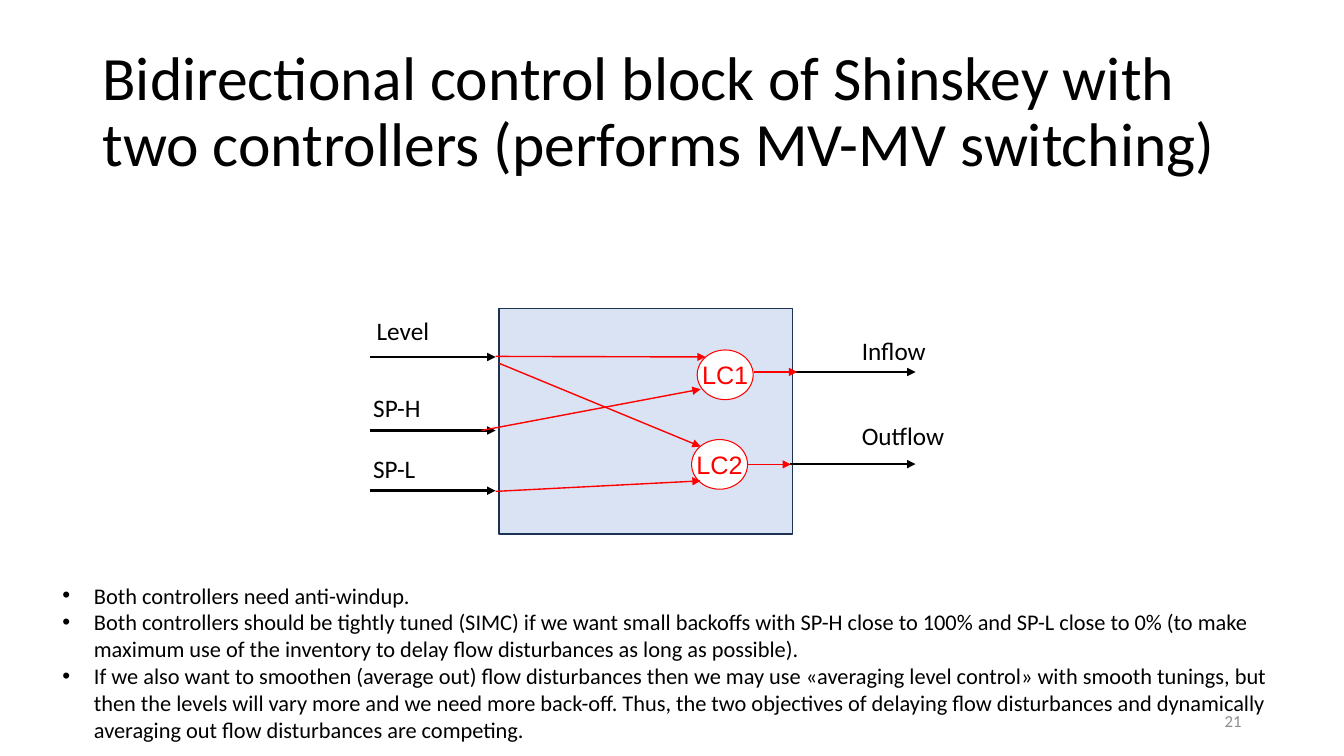
from lxml import etree
from pptx import Presentation
from pptx.dml.color import RGBColor
from pptx.enum.shapes import MSO_CONNECTOR, MSO_SHAPE
from pptx.enum.text import MSO_ANCHOR as Anchor, MSO_AUTO_SIZE as AutoSize, PP_ALIGN as Align
from pptx.oxml.ns import qn
from pptx.util import Pt

BLACK, RED, GREY = "000000", "FF0000", "8C8C8C"
TITLE = "Bidirectional control block of Shinskey with two controllers (performs MV-MV switching)"
NOTES = [
    "Both controllers need anti-windup.",
    "Both controllers should be tightly tuned (SIMC) if we want small backoffs with SP-H close to 100% "
    "and SP-L close to 0% (to make maximum use of the inventory to delay flow disturbances as long as possible).",
    "If we also want to smoothen (average out) flow disturbances then we may use «averaging level control» "
    "with smooth tunings, but then the levels will vary more and we need more back-off. Thus, the two "
    "objectives of delaying flow disturbances and dynamically averaging out flow disturbances are competing.",
]
SIGNAL_LENGTH = 90
INPUT_X, OUTPUT_X = 264, 564
SIGNALS = [(INPUT_X, 255), (INPUT_X, 307.5), (INPUT_X, 350.5), (OUTPUT_X, 265.7), (OUTPUT_X, 331.5)]
LABELS = [
    ("Level", 262, 222, 53),
    ("SP-H", 259.5, 276.5, 49),
    ("SP-L", 259.5, 320, 45),
    ("Inflow", 608.5, 236, 61),
    ("Outflow", 608.5, 296.5, 74),
]
CONTROLLERS = [("LC1", 498, 250), ("LC2", 494, 314)]
CONTROL_PATHS = [
    (356.5, 259.5, 500.5, 319),
    (344, 307.5, 500.5, 278),
    (354, 351, 500.5, 343.5),
    (354, 254.6, 504, 255),
    (538.5, 265.7, 569.5, 265.7),
    (533.5, 331.7, 565, 331.7),
]


def rgb(code):
    """Turn a hex string into a colour."""
    return RGBColor.from_string(code)


def add_run(paragraph, words, size, color=BLACK, font="Calibri"):
    """Append a formatted run to a paragraph."""
    run = paragraph.add_run()
    run.text = words
    run.font.size = Pt(size)
    run.font.name = font
    run.font.color.rgb = rgb(color)


def set_title(slide, words):
    """Place and format the title placeholder."""
    title = slide.shapes.title
    title.left, title.top, title.width, title.height = Pt(66), Pt(28.75), Pt(828), Pt(104.4)
    frame = title.text_frame
    frame.auto_size = AutoSize.NONE
    frame.vertical_anchor = Anchor.MIDDLE
    heading = frame.paragraphs[0]
    heading.alignment = Align.LEFT
    heading.line_spacing = 0.9
    add_run(heading, words, 44)


def add_text(slide, left, top, width, height, wrap=True):
    """Add an empty text box and return its frame."""
    frame = slide.shapes.add_textbox(Pt(left), Pt(top), Pt(width), Pt(height)).text_frame
    frame.word_wrap = wrap
    return frame


def add_node(slide, kind, left, top, width, height, fill, outline, weight):
    """Add a filled and outlined preset shape."""
    node = slide.shapes.add_shape(kind, Pt(left), Pt(top), Pt(width), Pt(height))
    node.shadow.inherit = False
    node.fill.solid()
    node.fill.fore_color.rgb = rgb(fill)
    node.line.color.rgb = rgb(outline)
    node.line.width = Pt(weight)
    return node


def add_controller(slide, name, left, top):
    """Add a round level controller with its name."""
    frame = add_node(slide, MSO_SHAPE.OVAL, left, top, 40, 35.5, "FFFFFF", RED, 0.75).text_frame
    frame.word_wrap = False
    frame.vertical_anchor = Anchor.MIDDLE
    frame.paragraphs[0].alignment = Align.CENTER
    add_run(frame.paragraphs[0], name, 18, RED, "Arial")


def add_arrow(slide, x1, y1, x2, y2, color, weight):
    """Add a straight arrow pointing at its second end."""
    arrow = slide.shapes.add_connector(MSO_CONNECTOR.STRAIGHT, Pt(x1), Pt(y1), Pt(x2), Pt(y2))
    arrow.line.color.rgb = rgb(color)
    arrow.line.width = Pt(weight)
    etree.SubElement(arrow.line._get_or_add_ln(), qn("a:tailEnd"), type="triangle")
    etree.SubElement(arrow._element.spPr, qn("a:effectLst"))


def add_bullets(slide, notes):
    """Add the bulleted remarks below the diagram."""
    frame = add_text(slide, 37.5, 412, 885, 124)
    for index, note in enumerate(notes):
        remark = frame.add_paragraph() if index else frame.paragraphs[0]
        properties = remark._p.get_or_add_pPr()
        properties.set("marL", str(Pt(22.5)))
        properties.set("indent", str(-Pt(22.5)))
        etree.SubElement(properties, qn("a:buFont"), typeface="Arial")
        etree.SubElement(properties, qn("a:buChar"), char="•")
        add_run(remark, note, 16)


def main():
    """Build the slide and save it."""
    deck = Presentation()
    deck.slide_width, deck.slide_height = Pt(960), Pt(540)
    slide = deck.slides.add_slide(deck.slide_layouts[5])
    set_title(slide, TITLE)

    number = add_text(slide, 678, 500.5, 216, 28.75)
    number.vertical_anchor = Anchor.MIDDLE
    number.paragraphs[0].alignment = Align.RIGHT
    add_run(number.paragraphs[0], "21", 12, GREY)

    add_node(slide, MSO_SHAPE.RECTANGLE, 356.5, 220.5, 209.5, 161, "DAE3F3", "1E3256", 1)
    for x, y in SIGNALS:
        add_arrow(slide, x, y, x + SIGNAL_LENGTH, y, BLACK, 2)
    for words, left, top, width in LABELS:
        label = add_text(slide, left, top, width, 29, wrap=False)
        add_run(label.paragraphs[0], words, 18)
    for name, left, top in CONTROLLERS:
        add_controller(slide, name, left, top)
    add_bullets(slide, NOTES)
    for ends in CONTROL_PATHS:
        add_arrow(slide, *ends, RED, 1)

    deck.save("out.pptx")


if __name__ == "__main__":
    main()
